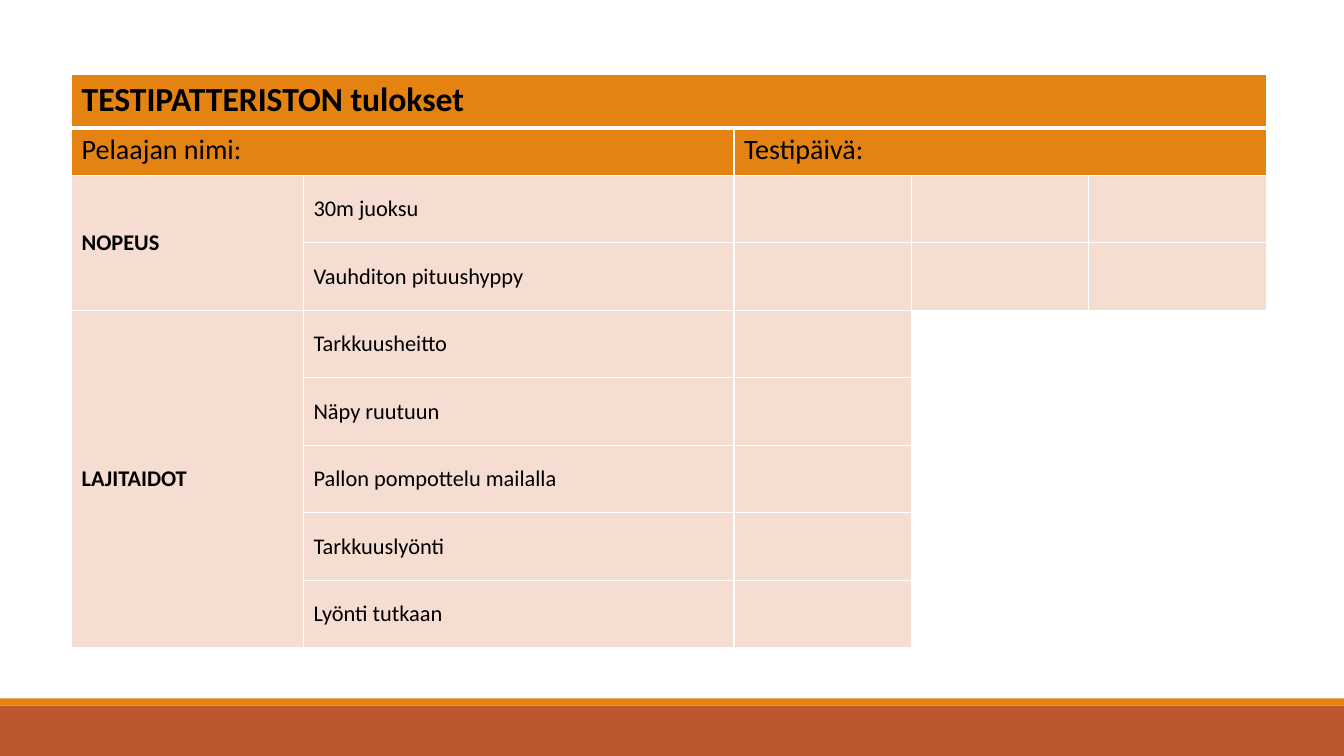
from lxml import etree
from pptx import Presentation
from pptx.dml.color import RGBColor
from pptx.enum.shapes import MSO_SHAPE
from pptx.enum.text import MSO_ANCHOR
from pptx.oxml.ns import qn
from pptx.util import Inches, Pt

RECTANGLE = MSO_SHAPE.RECTANGLE
TOP, MIDDLE = MSO_ANCHOR.TOP, MSO_ANCHOR.MIDDLE

COLORS = {
    "orange": "E48312",
    "rust": "BD582C",
    "peach": "F5DDD2",
    "white": "FFFFFF",
    "black": "000000",
}
COLUMN_WIDTHS = [2.3, 4.27, 1.76, 1.76, 1.76]
ROW_HEIGHTS = [0.53, 0.47] + [0.67] * 7
TEST_GROUPS = [
    ("NOPEUS", 3, ["30m juoksu", "Vauhditon pituushyppy"]),
    ("LAJITAIDOT", 1, ["Tarkkuusheitto", "Näpy ruutuun", "Pallon pompottelu mailalla",
                       "Tarkkuuslyönti", "Lyönti tutkaan"]),
]


class SlideBuilder:
    font = "Calibri"

    def __init__(self, page):
        self.page = page

    def color(self, name):
        return RGBColor.from_string(COLORS[name])

    def bar(self, left, top, width, height, fill):
        box = self.page.shapes.add_shape(
            RECTANGLE, Inches(left), Inches(top), Inches(width), Inches(height))
        box.shadow.inherit = False
        box.fill.solid()
        box.fill.fore_color.rgb = self.color(fill)
        box.line.fill.background()

    def table(self, left, top, widths, heights):
        frame = self.page.shapes.add_table(
            len(heights), len(widths), Inches(left), Inches(top),
            Inches(sum(widths)), Inches(sum(heights)))
        table = frame.table
        for column, width in zip(table.columns, widths):
            column.width = Inches(width)
        for row, height in zip(table.rows, heights):
            row.height = Inches(height)
        return table

    def fill(self, cell, name=None):
        if name:
            cell.fill.solid()
            cell.fill.fore_color.rgb = self.color(name)
        else:
            cell.fill.background()

    def borders(self, cell, top=1, bottom=1):
        properties = cell._tc.get_or_add_tcPr()
        sides = {"a:lnL": 1, "a:lnR": 1, "a:lnT": top, "a:lnB": bottom}
        for position, (side, points) in enumerate(sides.items()):
            line = etree.Element(qn(side), w=str(Pt(points)))
            paint = etree.SubElement(line, qn("a:solidFill"))
            etree.SubElement(paint, qn("a:srgbClr"), val=COLORS["white"])
            properties.insert(position, line)

    def label(self, cell, text, size=16, bold=False, anchor=MIDDLE):
        cell.vertical_anchor = anchor
        span = cell.text_frame.paragraphs[0].add_run()
        span.text = text
        span.font.name = self.font
        span.font.size = Pt(size)
        span.font.bold = bold
        span.font.color.rgb = self.color("black")


def fill_results(builder, table):
    last_column = len(COLUMN_WIDTHS) - 1
    for column in range(last_column + 1):
        for row in range(2):
            builder.fill(table.cell(row, column), "orange")
    table.cell(0, 0).merge(table.cell(0, last_column))
    table.cell(1, 0).merge(table.cell(1, 1))
    table.cell(1, 2).merge(table.cell(1, last_column))
    builder.label(table.cell(0, 0), "TESTIPATTERISTON tulokset", 24, True, TOP)
    builder.label(table.cell(1, 0), "Pelaajan nimi:", 20, anchor=TOP)
    builder.label(table.cell(1, 2), "Testipäivä:", 20, anchor=TOP)

    first = 2
    for group, attempts, tests in TEST_GROUPS:
        for row, test in enumerate(tests, first):
            for column in range(last_column + 1):
                shade = "peach" if column < 2 + attempts else None
                builder.fill(table.cell(row, column), shade)
            builder.label(table.cell(row, 1), test)
        table.cell(first, 0).merge(table.cell(first + len(tests) - 1, 0))
        builder.label(table.cell(first, 0), group, bold=True)
        first += len(tests)

    for row in range(len(ROW_HEIGHTS)):
        for column in range(last_column + 1):
            builder.borders(table.cell(row, column),
                            top=3 if row == 1 else 1, bottom=3 if row == 0 else 1)


def main():
    deck = Presentation()
    deck.slide_width = Inches(13.33)
    deck.slide_height = Inches(7.5)
    builder = SlideBuilder(deck.slides.add_slide(deck.slide_layouts[6]))
    builder.bar(0, 7, 13.33, 0.5, "rust")
    builder.bar(0, 6.93, 13.33, 0.07, "orange")
    fill_results(builder, builder.table(0.71, 0.74, COLUMN_WIDTHS, ROW_HEIGHTS))
    deck.save("out.pptx")


if __name__ == "__main__":
    main()
